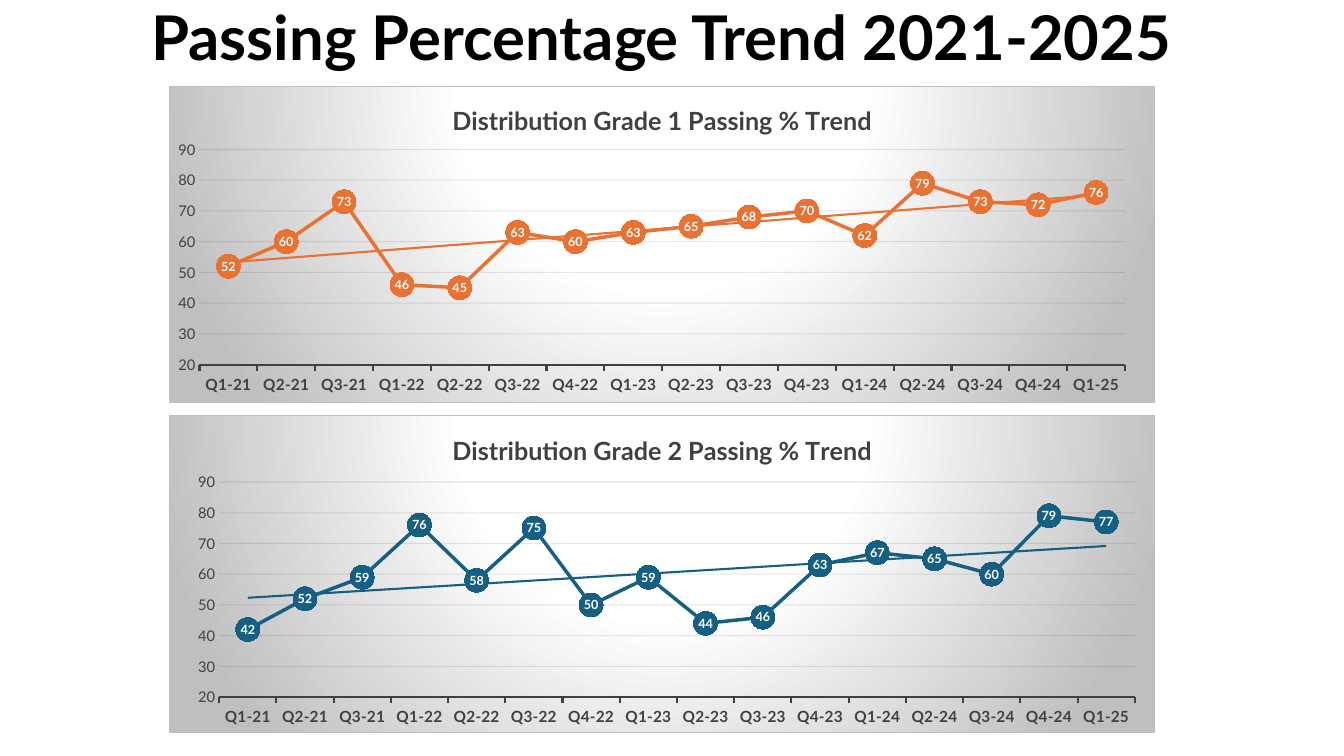
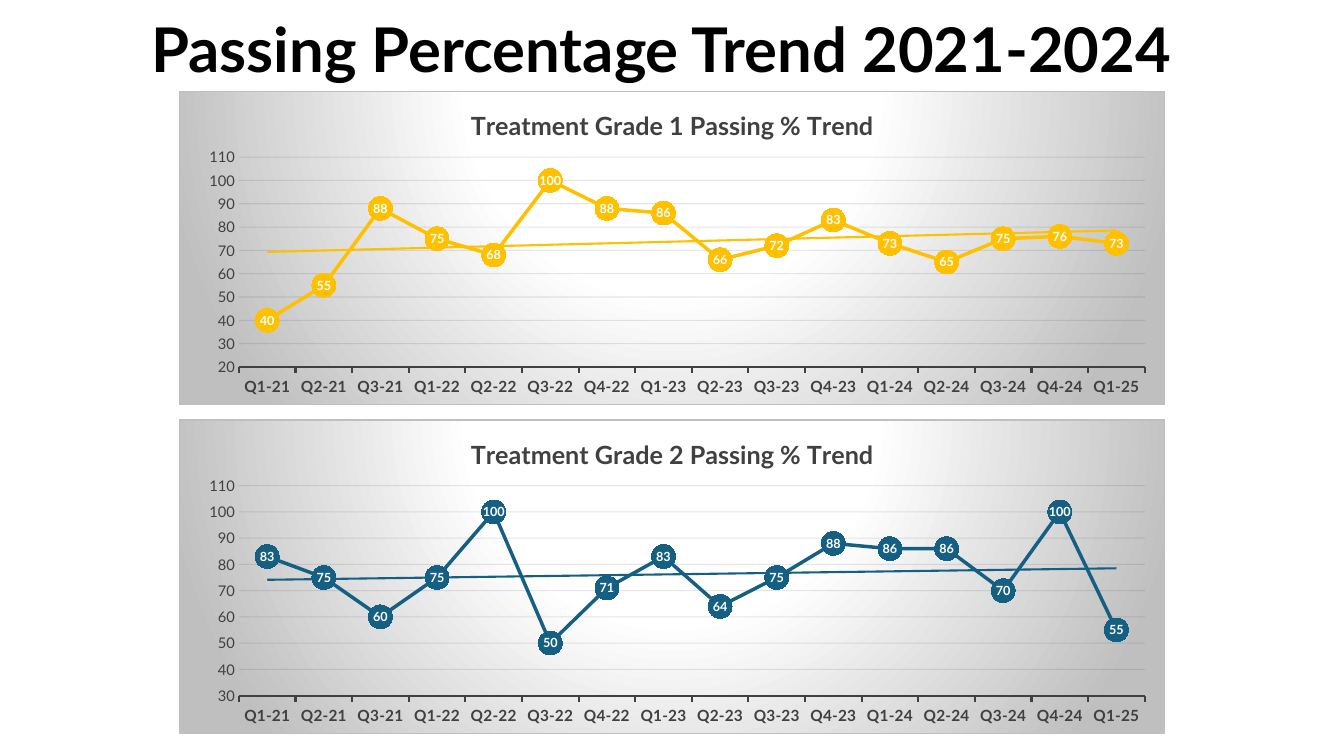
from lxml import etree
from pptx import Presentation
from pptx.chart.data import CategoryChartData
from pptx.dml.color import RGBColor
from pptx.enum.chart import XL_CHART_TYPE, XL_LABEL_POSITION, XL_MARKER_STYLE, XL_TICK_MARK
from pptx.enum.text import MSO_ANCHOR, MSO_AUTO_SIZE, PP_ALIGN
from pptx.oxml.ns import qn
from pptx.util import Cm, Pt

LINE_MARKERS = XL_CHART_TYPE.LINE_MARKERS
CIRCLE = XL_MARKER_STYLE.CIRCLE
LABEL_CENTER = XL_LABEL_POSITION.CENTER
TICK_OUTSIDE, TICK_NONE = XL_TICK_MARK.OUTSIDE, XL_TICK_MARK.NONE
BOTTOM, CENTER, NO_AUTOFIT = MSO_ANCHOR.BOTTOM, PP_ALIGN.CENTER, MSO_AUTO_SIZE.NONE

FONT = "Lato"
COLORS = {
    "black": "000000",
    "white": "FFFFFF",
    "text": "404040",
    "grid": "0D0D0D",
    "edge": "BFBFBF",
    "orange": "E97132",
    "blue": "156082",
    "yellow": "FFC000",
}
NAMESPACES = (
    'xmlns:c="http://schemas.openxmlformats.org/drawingml/2006/chart" '
    'xmlns:a="http://schemas.openxmlformats.org/drawingml/2006/main"'
)
QUARTERS = ["Q1-21", "Q2-21", "Q3-21"] + [
    f"Q{quarter}-{year}" for year in (22, 23, 24) for quarter in (1, 2, 3, 4)
] + ["Q1-25"]

# Lengths are in centimetres; "plot" holds left, top, width, height as shares of the chart.
PAGES = [
    {
        "title": "Passing Percentage Trend 2021-2025",
        "title_top": -0.79, "left": 4.27, "top": 2.16, "pitch": 8.3, "height": 8,
        "charts": [
            {"title": "Distribution Grade 1 Passing % Trend", "color": "orange",
             "range": (20, 90), "plot": (0.03, 0.2, 0.94, 0.68),
             "values": [52, 60, 73, 46, 45, 63, 60, 63, 65, 68, 70, 62, 79, 73, 72, 76]},
            {"title": "Distribution Grade 2 Passing % Trend", "color": "blue",
             "range": (20, 90), "plot": (0.05, 0.21, 0.93, 0.68),
             "values": [42, 52, 59, 76, 58, 75, 50, 59, 44, 46, 63, 67, 65, 60, 79, 77]},
        ],
    },
    {
        "title": "Passing Percentage Trend 2021-2024",
        "title_top": -0.51, "left": 4.52, "top": 2.29, "pitch": 8.28, "height": 7.92,
        "charts": [
            {"title": "Treatment Grade 1 Passing % Trend", "color": "yellow",
             "range": (20, 110), "plot": (0.06, 0.21, 0.92, 0.67),
             "values": [40, 55, 88, 75, 68, 100, 88, 86, 66, 72, 83, 73, 65, 75, 76, 73]},
            {"title": "Treatment Grade 2 Passing % Trend", "color": "blue",
             "range": (30, 110), "plot": (0.06, 0.21, 0.92, 0.67),
             "values": [83, 75, 60, 75, 100, 50, 71, 83, 64, 75, 88, 86, 86, 70, 100, 55]},
        ],
    },
]


def rgb(name):
    return RGBColor.from_string(COLORS[name])


def set_font(font, size, color, bold=False):
    font.name = FONT
    font.size = Pt(size)
    font.bold = bold
    font.color.rgb = rgb(color)


def set_line(line, color, width):
    line.color.rgb = rgb(color)
    line.width = Pt(width)


def chart_xml(tag, content):
    return etree.fromstring(f"<c:{tag} {NAMESPACES}>{content}</c:{tag}>")


def line_xml(color, width):
    return (f'<a:ln w="{Pt(width)}"><a:solidFill><a:srgbClr val="{COLORS[color]}"/>'
            "</a:solidFill></a:ln>")


def add_title(page, text, top):
    title = page.shapes.title
    title.left, title.top = Cm(1.78), Cm(top)
    title.width, title.height = Cm(29.79), Cm(2.79)
    frame = title.text_frame
    frame.text = text
    frame.word_wrap = True
    frame.auto_size = NO_AUTOFIT
    frame.vertical_anchor = BOTTOM
    para = frame.paragraphs[0]
    para.alignment = CENTER
    para.line_spacing = 0.9
    set_font(para.font, 44, "black", bold=True)


def fill_background(chart):
    """Give the chart area a circular gradient and a thin border."""
    stops = "".join(
        f'<a:gs pos="{share * 1000}"><a:srgbClr val="{COLORS[color]}"/></a:gs>'
        for share, color in ((0, "white"), (39, "white"), (100, "edge"))
    )
    background = chart_xml(
        "spPr",
        f'<a:gradFill><a:gsLst>{stops}</a:gsLst><a:path path="circle">'
        '<a:fillToRect l="50000" t="-80000" r="50000" b="180000"/></a:path></a:gradFill>'
        + line_xml("edge", 0.75),
    )
    chart._chartSpace.find(qn("c:chart")).addnext(background)


def place_plot(chart, shares):
    plot_area = chart._chartSpace.find(qn("c:chart")).find(qn("c:plotArea"))
    old_layout = plot_area.find(qn("c:layout"))
    if old_layout is not None:
        plot_area.remove(old_layout)
    sizes = "".join(f'<c:{key} val="{share}"/>' for key, share in zip("xywh", shares))
    plot_area.insert(0, chart_xml(
        "layout",
        '<c:manualLayout><c:layoutTarget val="inner"/><c:xMode val="edge"/>'
        f'<c:yMode val="edge"/>{sizes}</c:manualLayout>',
    ))


def format_axes(chart, lowest, highest):
    quarters = chart.category_axis
    quarters.has_major_gridlines = False
    quarters.major_tick_mark = TICK_OUTSIDE
    set_line(quarters.format.line, "text", 1.5)
    set_font(quarters.tick_labels.font, 11, "text", bold=True)

    percent = chart.value_axis
    percent.minimum_scale, percent.maximum_scale = lowest, highest
    percent.major_unit = 10
    percent.major_tick_mark = TICK_NONE
    percent.format.line.fill.background()
    set_font(percent.tick_labels.font, 10.5, "text")
    percent.has_major_gridlines = True
    grid = percent.major_gridlines.format.line
    set_line(grid, "grid", 0.75)
    grid_color = next(percent.major_gridlines._xAx.iter(qn("a:srgbClr")))
    etree.SubElement(grid_color, qn("a:alpha")).set("val", "10000")


def format_series(series, color):
    series.smooth = False
    set_line(series.format.line, color, 2.5)
    marker = series.marker
    marker.style, marker.size = CIRCLE, 17
    marker.format.fill.solid()
    marker.format.fill.fore_color.rgb = rgb(color)
    marker.format.line.fill.background()
    labels = series.data_labels
    labels.show_value = True
    labels.position = LABEL_CENTER
    set_font(labels.font, 9, "white", bold=True)
    trend = chart_xml(
        "trendline",
        f'<c:spPr>{line_xml(color, 1.5)}</c:spPr><c:trendlineType val="linear"/>'
        '<c:dispRSqr val="0"/><c:dispEq val="0"/>',
    )
    series._element.find(qn("c:cat")).addprevious(trend)


def add_trend_chart(page, spec_row, left, top, height):
    data = CategoryChartData()
    data.categories = QUARTERS
    data.add_series("Series 1", spec_row["values"])
    chart = page.shapes.add_chart(
        LINE_MARKERS, Cm(left), Cm(top), Cm(24.84), Cm(height), data
    ).chart
    set_font(chart.font, 10, "black")
    chart.has_legend = False
    chart.has_title = True
    chart.chart_title.include_in_layout = False
    frame = chart.chart_title.text_frame
    frame.text = spec_row["title"]
    set_font(frame.paragraphs[0].font, 18, "text", bold=True)
    chart.plots[0].vary_by_categories = False
    fill_background(chart)
    place_plot(chart, spec_row["plot"])
    format_axes(chart, *spec_row["range"])
    format_series(chart.plots[0].series[0], spec_row["color"])


def main():
    deck = Presentation()
    deck.slide_width, deck.slide_height = Cm(33.87), Cm(19.05)
    title_only = deck.slide_layouts[5]
    for content in PAGES:
        page = deck.slides.add_slide(title_only)
        add_title(page, content["title"], content["title_top"])
        for row, chart_content in enumerate(content["charts"]):
            top = content["top"] + row * content["pitch"]
            add_trend_chart(page, chart_content, content["left"], top, content["height"])


    deck.save("out.pptx")


if __name__ == "__main__":
    main()
